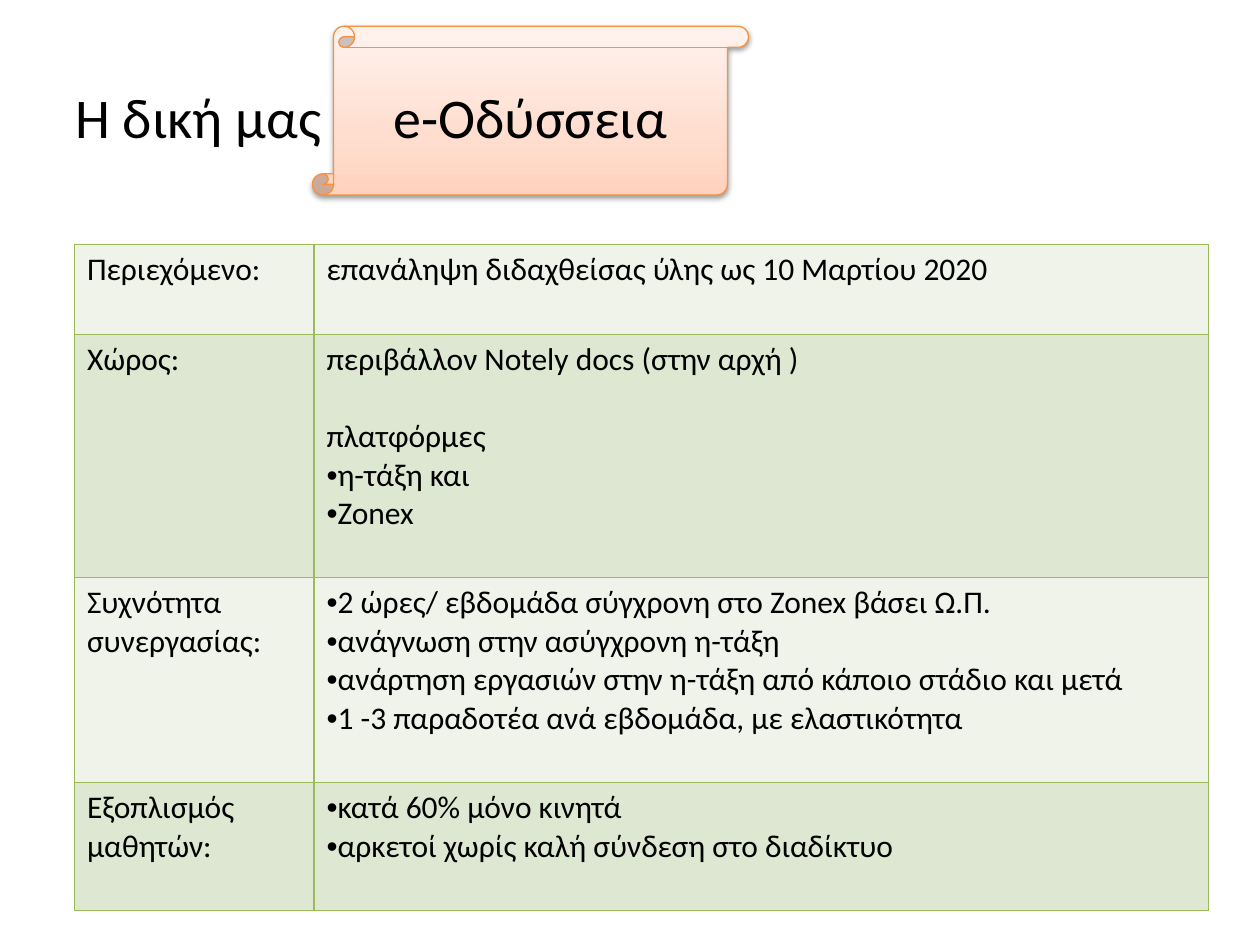
"""Build the slide that introduces the e-Odyssey class project."""
from copy import deepcopy

from lxml.etree import SubElement
from pptx import Presentation
from pptx.dml.color import RGBColor
from pptx.enum.shapes import MSO_SHAPE
from pptx.enum.text import MSO_ANCHOR, PP_ALIGN
from pptx.oxml.ns import qn
from pptx.util import Cm, Pt

BLACK = RGBColor(0x00, 0x00, 0x00)
GREEN = RGBColor(0x9B, 0xBB, 0x59)
ORANGE = RGBColor(0xF6, 0x92, 0x40)
BANDS = [RGBColor(0xEF, 0xF3, 0xEA), RGBColor(0xDE, 0xE7, 0xD1)]
SCROLL_STOPS = [
    (0, RGBColor(0xFF, 0xD2, 0xBD)),
    (0.35, RGBColor(0xFF, 0xDE, 0xD0)),
    (1, RGBColor(0xFF, 0xF2, 0xED)),
]
FONT = "Calibri"
BULLET = "•"
TITLE = "Η δική μας"
SCROLL_TEXT = "e-Οδύσσεια"
COLUMN_WIDTHS = [4.83, 18.03]
ROWS = [
    (1.81, "Περιεχόμενο:", ["επανάληψη διδαχθείσας ύλης ως 10 Μαρτίου 2020"]),
    (4.9, "Χώρος:", [
        "περιβάλλον Notely docs (στην αρχή )",
        "πλατφόρμες",
        "•η-τάξη και",
        "•Zonex",
    ]),
    (4.13, "Συχνότητα συνεργασίας:", [
        "•2 ώρες/ εβδομάδα σύγχρονη στο Zonex βάσει Ω.Π.",
        "•ανάγνωση στην ασύγχρονη η-τάξη",
        "•ανάρτηση εργασιών στην η-τάξη από κάποιο στάδιο και μετά",
        "•1 -3 παραδοτέα ανά εβδομάδα, με ελαστικότητα",
    ]),
    (2.58, "Εξοπλισμός μαθητών:", [
        "•κατά 60% μόνο κινητά",
        "•αρκετοί χωρίς καλή σύνδεση στο διαδίκτυο",
    ]),
]


def format_runs(paragraph, size):
    for run in paragraph.runs:
        run.font.name = FONT
        run.font.size = Pt(size)
        run.font.color.rgb = BLACK


def set_heading(shape, text, alignment):
    frame = shape.text_frame
    frame.text = text
    frame.word_wrap = True
    frame.vertical_anchor = MSO_ANCHOR.MIDDLE
    frame.paragraphs[0].alignment = alignment
    format_runs(frame.paragraphs[0], 32)


def add_bullet(paragraph):
    properties = paragraph._p.get_or_add_pPr()
    properties.set("marL", "0")
    properties.set("indent", "0")
    SubElement(properties, qn("a:buFont"), typeface="Arial")
    SubElement(properties, qn("a:buChar"), char=BULLET)


def add_borders(cell):
    properties = cell._tc.get_or_add_tcPr()
    for side in ("lnL", "lnR", "lnT", "lnB"):
        line = SubElement(properties, qn(f"a:{side}"), w=str(Pt(1)))
        fill = SubElement(line, qn("a:solidFill"))
        SubElement(fill, qn("a:srgbClr"), val=str(GREEN))


def fill_cell(cell, lines, color):
    add_borders(cell)
    cell.fill.solid()
    cell.fill.fore_color.rgb = color
    frame = cell.text_frame
    for index, line in enumerate(lines):
        paragraph = frame.add_paragraph() if index else frame.paragraphs[0]
        paragraph.text = line.removeprefix(BULLET)
        format_runs(paragraph, 18)
        if line.startswith(BULLET):
            add_bullet(paragraph)
        elif index:
            paragraph.space_before = Pt(22)


def add_plan_table(slide):
    heights = [height for height, _, _ in ROWS]
    table = slide.shapes.add_table(
        len(ROWS), len(COLUMN_WIDTHS), Cm(1.5), Cm(4.93),
        Cm(sum(COLUMN_WIDTHS)), Cm(sum(heights))).table
    table.first_row = False
    for column, width in zip(table.columns, COLUMN_WIDTHS):
        column.width = Cm(width)
    for index, (height, label, lines) in enumerate(ROWS):
        table.rows[index].height = Cm(height)
        color = BANDS[index % 2]
        fill_cell(table.cell(index, 0), [label], color)
        fill_cell(table.cell(index, 1), lines, color)


def add_shadow(shape):
    shape.shadow.inherit = False
    effects = shape._element.spPr.find(qn("a:effectLst"))
    shadow = SubElement(effects, qn("a:outerShdw"), blurRad=str(Pt(3.1)),
                        dist=str(Pt(1.6)), dir="5400000", rotWithShape="0")
    color = SubElement(shadow, qn("a:srgbClr"), val=str(BLACK))
    SubElement(color, qn("a:alpha"), val="38000")


def add_scroll(slide):
    shape = slide.shapes.add_shape(
        MSO_SHAPE.VERTICAL_SCROLL, Cm(6.3), Cm(0.53), Cm(8.79), Cm(3.4))
    shape.fill.gradient()
    shape.fill.gradient_angle = 90
    stop_list = shape._element.spPr.find(f".//{qn('a:gsLst')}")
    stop_list.append(deepcopy(stop_list[0]))
    for stop, (position, color) in zip(shape.fill.gradient_stops, SCROLL_STOPS):
        stop.position = position
        stop.color.rgb = color
    shape.line.color.rgb = ORANGE
    shape.line.width = Pt(0.75)
    add_shadow(shape)
    set_heading(shape, SCROLL_TEXT, PP_ALIGN.CENTER)


def main():
    presentation = Presentation()
    presentation.slide_width = Cm(25.4)
    presentation.slide_height = Cm(19.05)
    slide = presentation.slides.add_slide(presentation.slide_layouts[6])
    title = slide.shapes.add_textbox(Cm(1.27), Cm(0.76), Cm(22.86), Cm(3.18))
    set_heading(title, TITLE, PP_ALIGN.LEFT)
    add_plan_table(slide)
    add_scroll(slide)
    presentation.save("out.pptx")


if __name__ == "__main__":
    main()
